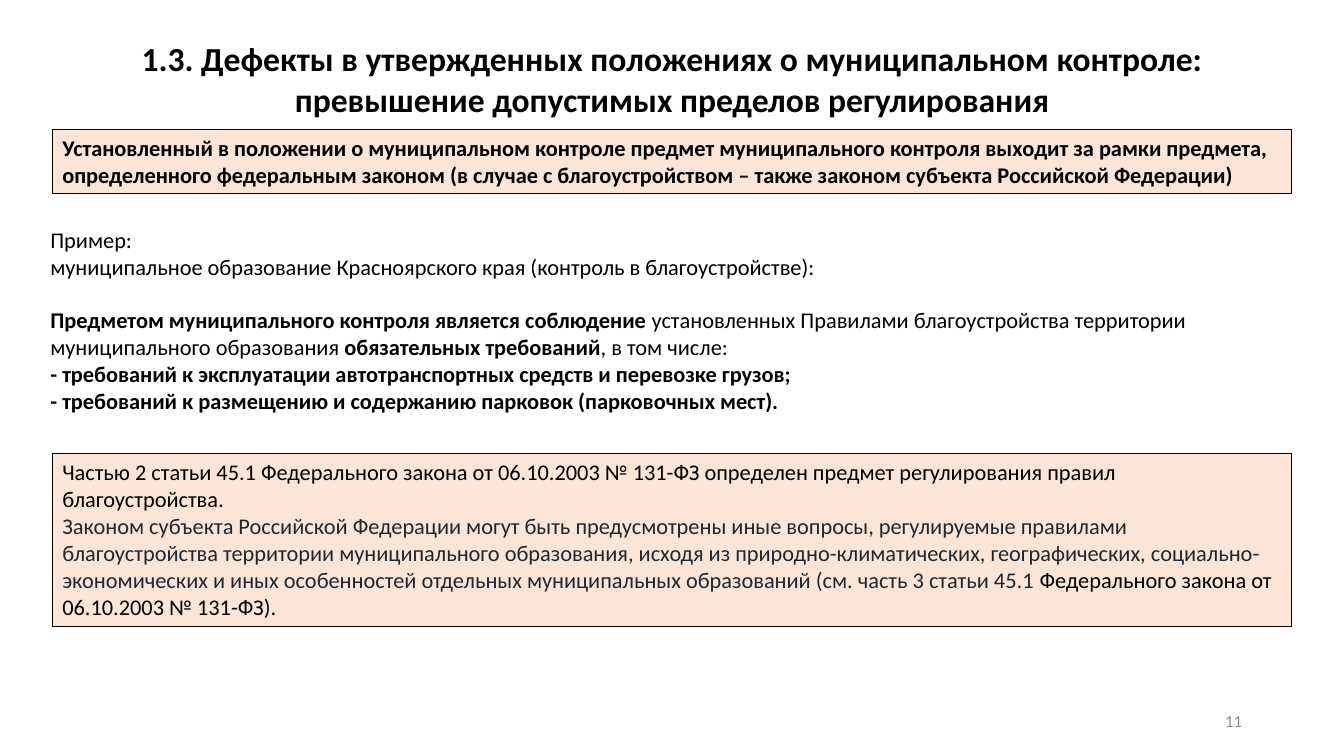
from dataclasses import dataclass

from pptx import Presentation
from pptx.dml.color import RGBColor
from pptx.enum.shapes import MSO_SHAPE
from pptx.enum.text import MSO_ANCHOR, MSO_AUTO_SIZE, PP_ALIGN
from pptx.oxml.xmlchemy import OxmlElement
from pptx.util import Inches, Pt

RECTANGLE = MSO_SHAPE.RECTANGLE
TOP, MIDDLE = MSO_ANCHOR.TOP, MSO_ANCHOR.MIDDLE
LEFT, CENTER, RIGHT = PP_ALIGN.LEFT, PP_ALIGN.CENTER, PP_ALIGN.RIGHT
NO_FIT, GROW = MSO_AUTO_SIZE.NONE, MSO_AUTO_SIZE.SHAPE_TO_FIT_TEXT
GRID = 100  # columns across and rows down the slide


@dataclass(frozen=True)
class Theme:
    font: str = "Calibri"
    ink: str = "000000"
    law_ink: str = "22272F"
    muted: str = "8C8C8C"
    panel: str = "FBE5D6"
    title_size: int = 24
    body_size: int = 16
    number_size: int = 12
    outline: float = 0.75
    paragraph_gap: float = 19.2


class SlideBuilder:
    def __init__(self, presentation, theme):
        self.theme = theme
        self.column = presentation.slide_width / GRID
        self.row = presentation.slide_height / GRID
        self.slide = presentation.slides.add_slide(presentation.slide_layouts[1])

    def area(self, left, top, width, height):
        """Turn grid columns and rows into slide lengths."""
        return (round(left * self.column), round(top * self.row),
                round(width * self.column), round(height * self.row))

    def place(self, shape, area):
        for name, value in zip(("left", "top", "width", "height"), self.area(*area)):
            setattr(shape, name, value)

    def fill_text(self, shape, paragraphs, size, align=LEFT, anchor=TOP, fit=GROW, gaps=()):
        """Fill a shape with paragraphs of (text, bold, colour) runs.

        gaps lists the paragraphs that are set apart from the one above.
        """
        frame = shape.text_frame
        frame_format = {"word_wrap": True, "auto_size": fit, "vertical_anchor": anchor}
        for name, value in frame_format.items():
            setattr(frame, name, value)
        for index, runs in enumerate(paragraphs):
            paragraph = frame.paragraphs[0] if index == 0 else frame.add_paragraph()
            space = self.theme.paragraph_gap if index in gaps else 0
            paragraph_format = {"alignment": align, "line_spacing": 1.0,
                                "space_before": Pt(space), "space_after": Pt(0)}
            for name, value in paragraph_format.items():
                setattr(paragraph, name, value)
            for text, bold, color in runs:
                run = paragraph.add_run()
                run.text = text
                run_format = {"name": self.theme.font, "size": Pt(size), "bold": bold}
                for name, value in run_format.items():
                    setattr(run.font, name, value)
                run.font.color.rgb = RGBColor.from_string(color)

    def title(self, text, area):
        shape = self.slide.shapes.title
        self.place(shape, area)
        self.fill_text(shape, [[(text, True, self.theme.ink)]], self.theme.title_size,
                       CENTER, MIDDLE, NO_FIT)

    def body(self, paragraphs, area, gaps):
        shape = self.slide.placeholders[1]
        self.place(shape, area)
        self.fill_text(shape, paragraphs, self.theme.body_size, gaps=gaps)
        for paragraph in shape.text_frame.paragraphs:
            properties = paragraph._p.get_or_add_pPr()
            properties.set("marL", "0")
            properties.set("indent", "0")
            properties.append(OxmlElement("a:buNone"))

    def panel(self, paragraphs, area):
        shape = self.slide.shapes.add_shape(RECTANGLE, *self.area(*area))
        shape.shadow.inherit = False
        shape.fill.solid()
        shape.fill.fore_color.rgb = RGBColor.from_string(self.theme.panel)
        shape.line.color.rgb = RGBColor.from_string(self.theme.ink)
        shape.line.width = Pt(self.theme.outline)
        self.fill_text(shape, paragraphs, self.theme.body_size)

    def page_number(self, text, area):
        shape = self.slide.shapes.add_textbox(*self.area(*area))
        self.fill_text(shape, [[(text, False, self.theme.muted)]], self.theme.number_size,
                       RIGHT, MIDDLE, NO_FIT)


def main():
    presentation = Presentation()
    presentation.slide_width, presentation.slide_height = Inches(13.33), Inches(7.5)
    theme = Theme()
    builder = SlideBuilder(presentation, theme)
    ink = theme.ink
    panel_left, panel_width = 3.9, 92.2

    builder.title("1.3. Дефекты в утвержденных положениях о муниципальном контроле: "
                  "превышение допустимых пределов регулирования", (9.53, 2, 80.95, 16.8))
    builder.panel([[(
        "Установленный в положении о муниципальном контроле предмет муниципального "
        "контроля выходит за рамки предмета, определенного федеральным законом (в случае "
        "с благоустройством – также законом субъекта Российской Федерации)", True, ink)]],
        (panel_left, 17.07, panel_width, 8.53))
    builder.body([
        [("Пример:", False, ink)],
        [("муниципальное образование Красноярского края (контроль в благоустройстве):",
          False, ink)],
        [("Предметом муниципального контроля является соблюдение ", True, ink),
         ("установленных Правилами благоустройства территории муниципального образования ",
          False, ink),
         ("обязательных требований", True, ink),
         (", в том числе:", False, ink)],
        [("- требований к эксплуатации автотранспортных средств и перевозке грузов;",
          True, ink)],
        [("- требований к размещению и содержанию парковок (парковочных мест).", True, ink)],
    ], (3, 29.2, 95.57, 30.13), gaps=(2,))
    builder.panel([
        [("Частью 2 статьи 45.1 Федерального закона от 06.10.2003 № 131-ФЗ определен "
          "предмет регулирования правил благоустройства.", False, ink)],
        [("Законом субъекта Российской Федерации могут быть предусмотрены иные вопросы, "
          "регулируемые правилами благоустройства территории муниципального образования, "
          "исходя из природно-климатических, географических, социально-экономических и "
          "иных особенностей отдельных муниципальных образований (см. часть 3 статьи 45.1",
          False, theme.law_ink),
         (" Федерального закона от 06.10.2003 № 131-ФЗ).", False, ink)],
    ], (panel_left, 60, panel_width, 22.93))
    builder.page_number("11", (70.67, 92.67, 22.5, 5.33))

    presentation.save("out.pptx")


if __name__ == "__main__":
    main()
